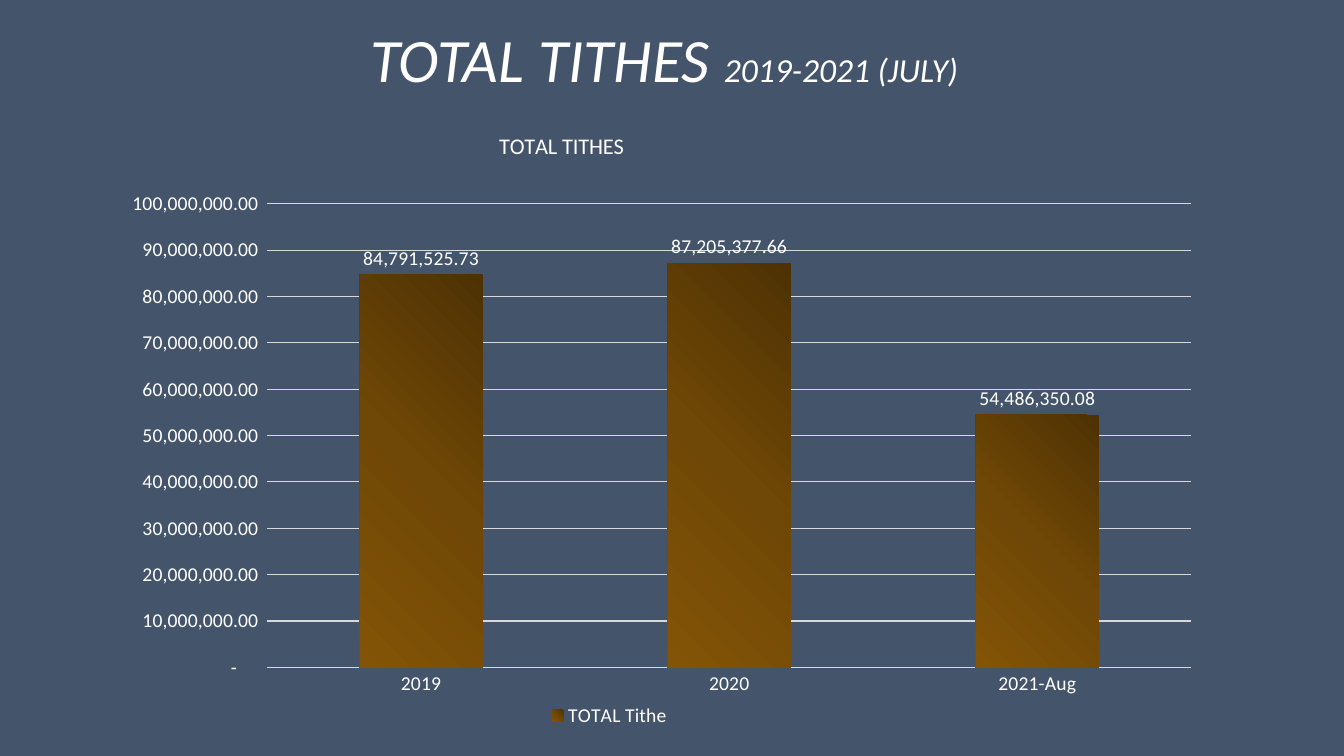
from lxml.etree import SubElement
from pptx import Presentation
from pptx.chart.data import CategoryChartData as ChartData
from pptx.dml.color import RGBColor as Rgb
from pptx.enum.chart import XL_CHART_TYPE as Kind
from pptx.enum.chart import XL_LABEL_POSITION as Label
from pptx.enum.chart import XL_LEGEND_POSITION as Legend
from pptx.enum.chart import XL_TICK_MARK as Tick
from pptx.enum.text import MSO_ANCHOR as Anchor
from pptx.enum.text import PP_ALIGN as Align
from pptx.oxml import parse_xml
from pptx.oxml.ns import nsdecls, qn
from pptx.util import Pt

COLORS = {"back": "44546A", "text": "FFFFFF", "grid": "D9D9D9"}
SHADES = {0: "4E3204", 50: "6F4706", 100: "835407"}
FACE = "Calibri"
MONEY = r'_(* #,##0.00_);_(* \(#,##0.00\);_(* "-"??_);_(@_)'
TITHES = {"2019": 84791525.73, "2020": 87205377.66, "2021-Aug": 54486350.08}


def style(font, size, **extra):
    form = {"name": FACE, "size": Pt(size), "bold": False, **extra}
    for key, value in form.items():
        setattr(font, key, value)
    font.color.rgb = Rgb.from_string(COLORS["text"])


def rule(line):
    line.width = Pt(0.75)
    line.color.rgb = Rgb.from_string(COLORS["grid"])


def place(part, index, **spots):
    """Fix a chart part at fractions of the chart area."""
    for old in part.findall(qn("c:layout")):
        part.remove(old)
    layout = parse_xml(f"<c:layout {nsdecls('c')}><c:manualLayout/></c:layout>")
    modes = {"xMode": "edge", "yMode": "edge"}
    if "w" in spots:
        modes = {"layoutTarget": "inner", **modes}
    for tag, value in {**modes, **spots}.items():
        SubElement(layout[0], qn(f"c:{tag}")).set("val", str(value))
    part.insert(index, layout)


def shade(bars):
    """Fill the bars with a diagonal gradient of three stops."""
    fill = bars.format.fill
    fill.gradient()
    fill.gradient_angle = 225
    stops = bars._element.xpath("c:spPr/a:gradFill/a:gsLst")[0]
    for old in list(stops):
        stops.remove(old)
    for spot, color in SHADES.items():
        stop = SubElement(stops, qn("a:gs"), pos=str(spot * 1000))
        SubElement(stop, qn("a:srgbClr"), val=color)


def add_title(slide):
    title = slide.shapes.title
    box = {"left": 78.5, "top": 8, "width": 792, "height": 73.5}
    for key, value in box.items():
        setattr(title, key, Pt(value))
    frame = title.text_frame
    frame.word_wrap = True
    frame.vertical_anchor = Anchor.MIDDLE
    line = frame.paragraphs[0]
    line.alignment = Align.CENTER
    line.line_spacing = 0.9
    for text, size in (("TOTAL TITHES ", 44), ("2019-2021 (JULY)", 24)):
        run = line.add_run()
        run.text = text
        style(run.font, size, italic=True)


def set_axes(chart):
    for axis in (chart.category_axis, chart.value_axis):
        axis.major_tick_mark = axis.minor_tick_mark = Tick.NONE
        style(axis.tick_labels.font, 14)
    rule(chart.category_axis.format.line)
    scale = chart.value_axis
    scale.format.line.fill.background()
    rule(scale.major_gridlines.format.line)
    form = {"minimum_scale": 0, "maximum_scale": 100000000,
            "major_unit": 10000000}
    for key, value in form.items():
        setattr(scale, key, value)
    scale.tick_labels.number_format = MONEY
    scale.tick_labels.number_format_is_linked = False


def set_bars(plot):
    plot.gap_width = 150
    plot.vary_by_categories = False
    shade(plot.series[0])
    labels = plot.series[0].data_labels
    form = {"show_value": True, "position": Label.OUTSIDE_END,
            "number_format": MONEY, "number_format_is_linked": False}
    for key, value in form.items():
        setattr(labels, key, value)
    style(labels.font, 14)


def add_chart(slide):
    data = ChartData(number_format=MONEY)
    data.categories = list(TITHES)
    data.add_series("TOTAL Tithe", list(TITHES.values()))
    chart = slide.shapes.add_chart(
        Kind.COLUMN_CLUSTERED, Pt(28), Pt(72), Pt(904.5), Pt(460), data).chart
    style(chart.font, 14)
    set_axes(chart)
    set_bars(chart.plots[0])

    # Chart title
    chart.has_title = True
    head = chart.chart_title
    head.text_frame.text = "TOTAL TITHES"
    style(head.text_frame.paragraphs[0].runs[0].font, 16)
    head.include_in_layout = False
    place(head._element, 1, x=0.36, y=0.04)

    # Legend
    chart.has_legend = True
    key = chart.legend
    key.position = Legend.BOTTOM
    key.include_in_layout = False
    style(key.font, 14)
    place(key._element, 1, x=0.4, y=0.93)

    # Plot area
    area = chart._chartSpace.chart.plotArea
    place(area, 0, x=0.18, y=0.16, w=0.73, h=0.72)


def main():
    deck = Presentation()
    deck.slide_width, deck.slide_height = Pt(960), Pt(540)
    slide = deck.slides.add_slide(deck.slide_layouts[5])
    back = slide.background.fill
    back.solid()
    back.fore_color.rgb = Rgb.from_string(COLORS["back"])
    add_title(slide)
    add_chart(slide)
    deck.save("out.pptx")


if __name__ == "__main__":
    main()
